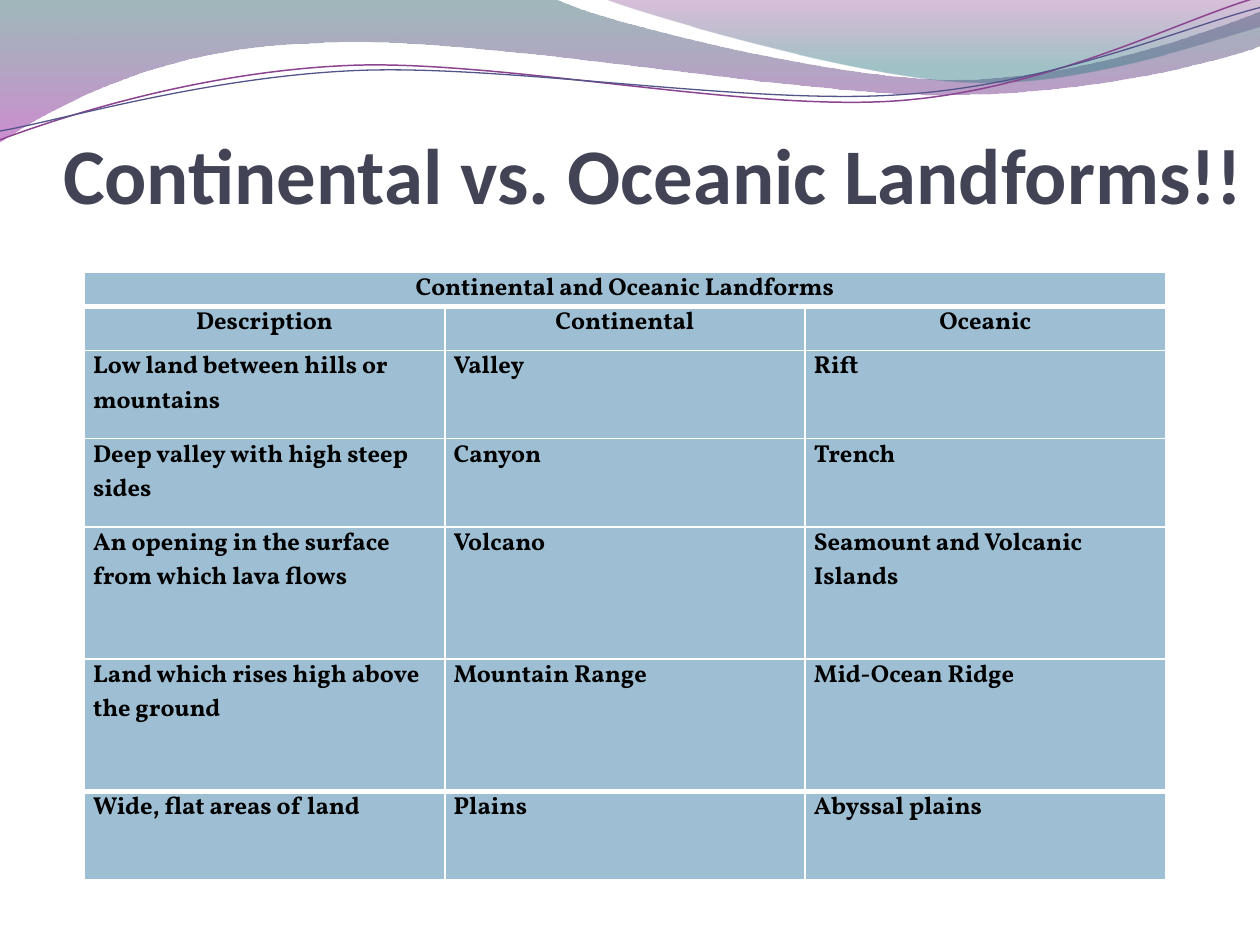
import pptx
import pptx.util
import pptx.dml.color
import pptx.enum.text
import pptx.oxml
import pptx.oxml.ns

RGB = pptx.dml.color.RGBColor.from_string
Pt = pptx.util.Pt
ALIGN = pptx.enum.text.PP_ALIGN
qn = pptx.oxml.ns.qn
NS = pptx.oxml.ns.nsdecls("a")

theme = {
    "title": ("Calibri", 45, "424456"),
    "table": ("Vollkorn", 14, "000000"),
    "cell": "9DBED3",
    "rule": "FFFFFF",
}

deck = pptx.Presentation()
deck.slide_width = pptx.util.Inches(10)
deck.slide_height = pptx.util.Inches(7.5)
unit = deck.slide_width // 10
slide = deck.slides.add_slide(deck.slide_layouts[5])


def draw(path, close):
    """Build a freeform: pairs are line ends, sixes are cubic curves."""
    ends = [(seg[-2] * unit, seg[-1] * unit) for seg in path]
    form = slide.shapes.build_freeform(*ends[0], scale=1.0)
    form.add_line_segments(ends[1:], close=close)
    shape = form.convert_to_shape()
    shape.shadow.inherit = False
    lines = list(shape._element.iter(qn("a:lnTo")))
    for line, seg in zip(lines, path[1:]):
        if len(seg) == 6:
            pts = "".join(
                f'<a:pt x="{round(x * unit) - shape.left}" y="{round(y * unit) - shape.top}"/>'
                for x, y in zip(seg[::2], seg[1::2]))
            curve = pptx.oxml.parse_xml(f"<a:cubicBezTo {NS}>{pts}</a:cubicBezTo>")
            line.getparent().replace(line, curve)
    return shape


def style(para, font):
    para.font.name, size, color = font
    para.font.size = Pt(size)
    para.font.bold = True
    para.font.color.rgb = RGB(color)


# Waves: path, then gradient stops as (share, colour, opacity in percent)
waves = [
    ([(0, 0), (4.4, -0.01), (4.76, 0.17, 6.64, 0.63, 7.58, 0.63),
      (8.53, 0.63, 9.58, 0.26, 10, 0.09), (10.01, 0.36),
      (9.83, 0.44, 8.7, 0.76, 7.46, 0.75), (6.22, 0.75, 3.82, 0.28, 2.57, 0.34),
      (1.29, 0.36, 0.46, 0.83, -0.01, 1.13)],
     [(0, "2D6368", 45), (1, "A530A9", 55)]),
    ([(4.79, -0.01), (5.09, 0.11, 6.82, 0.62, 7.69, 0.65),
      (8.56, 0.69, 9.61, 0.32, 10, 0.21), (10, 0)],
     [(0, "7F2F82", 30), (0.8, "2F7B82", 45)]),
]
for path, stops in waves:
    wave = draw(path, True)
    wave.line.fill.background()
    wave.fill.gradient()
    wave.fill.gradient_angle = 270
    for stop, (share, color, alpha) in zip(wave.fill.gradient_stops, stops):
        stop.position = share
        stop.color.rgb = RGB(color)
    marks = wave._element.spPr.iter(qn("a:srgbClr"))
    for mark, (share, color, alpha) in zip(marks, stops):
        mark.append(pptx.oxml.parse_xml(f'<a:alpha {NS} val="{alpha * 1000}"/>'))

# Thin strands under the waves
strands = [
    ([(0, 1.11), (0.48, 0.93, 1.58, 0.57, 2.77, 0.52),
      (3.95, 0.47, 5.93, 0.89, 7.13, 0.8), (8.33, 0.71, 9.38, 0.15, 9.98, -0.02)],
     "8D4490", 0.85),
    ([(0, 1.04), (0.47, 0.96, 1.64, 0.61, 2.83, 0.56),
      (4.03, 0.51, 5.97, 0.84, 7.17, 0.75), (8.36, 0.67, 9.41, 0.21, 10, 0.06)],
     "53548A", 0.75),
]
for path, color, width in strands:
    strand = draw(path, False)
    strand.fill.background()
    strand.line.color.rgb = RGB(color)
    strand.line.width = Pt(width)

# Title, brought in front of the waves
title = slide.shapes.title
title._element.getparent().append(title._element)
title.left, title.top = unit // 2, unit // 2
title.width, title.height = int(9.5 * unit), int(1.25 * unit)
frame = title.text_frame
frame.text = "Continental vs. Oceanic Landforms!!"
frame.word_wrap = True
frame.auto_size = pptx.enum.text.MSO_AUTO_SIZE.NONE
frame.vertical_anchor = pptx.enum.text.MSO_ANCHOR.BOTTOM
frame.margin_left = frame.margin_right = frame.margin_bottom = 0
frame.margin_top = int(0.05 * unit)
frame.paragraphs[0].alignment = ALIGN.LEFT
style(frame.paragraphs[0], theme["title"])

# Table
rows = [
    ("Continental and Oceanic Landforms", "", ""),
    ("Description", "Continental", "Oceanic"),
    ("Low land between hills or mountains", "Valley", "Rift"),
    ("Deep valley with high steep sides", "Canyon", "Trench"),
    ("An opening in the surface from which lava flows", "Volcano",
     "Seamount and Volcanic Islands"),
    ("Land which rises high above the ground", "Mountain Range", "Mid-Ocean Ridge"),
    ("Wide, flat areas of land", "Plains", "Abyssal plains"),
]
spans = [0.7, 1, 2, 2, 3, 3, 2]
step = 0.35 * unit
col = int(2.86 * unit)
last = len(rows) - 1
grid = slide.shapes.add_table(len(rows), 3, int(0.67 * unit), int(2.16 * unit),
                              3 * col, int(sum(spans) * step)).table
grid.first_row = grid.horz_banding = False
for column in grid.columns:
    column.width = col
grid.cell(0, 0).merge(grid.cell(0, 2))

for r, row in enumerate(rows):
    grid.rows[r].height = int(spans[r] * step)
    thick = {"T": r in (1, last), "B": r in (0, last - 1)}
    for c, text in enumerate(row):
        cell = grid.cell(r, c)
        cell.text = text
        cell.margin_left = cell.margin_right = int(0.07 * unit)
        cell.margin_top = cell.margin_bottom = 0
        for side in "LRTB":
            width = Pt(3 if thick.get(side) else 1)
            cell._tc.get_or_add_tcPr().append(pptx.oxml.parse_xml(
                f'<a:ln{side} {NS} w="{width}"><a:solidFill>'
                f'<a:srgbClr val="{theme["rule"]}"/></a:solidFill></a:ln{side}>'))
        cell.fill.solid()
        cell.fill.fore_color.rgb = RGB(theme["cell"])
        para = cell.text_frame.paragraphs[0]
        para.alignment = ALIGN.CENTER if r < 2 else ALIGN.LEFT
        style(para, theme["table"])

deck.save("out.pptx")
